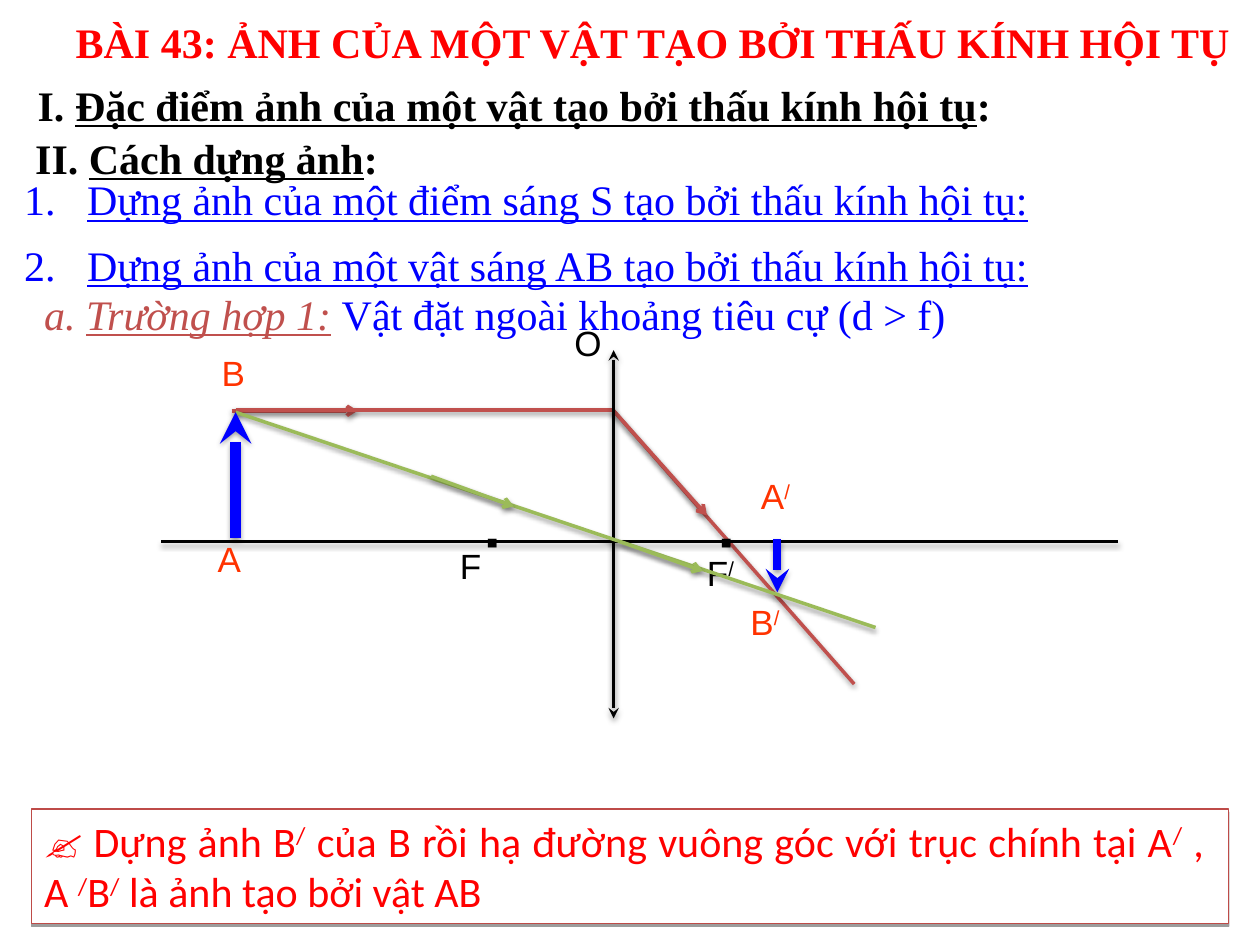
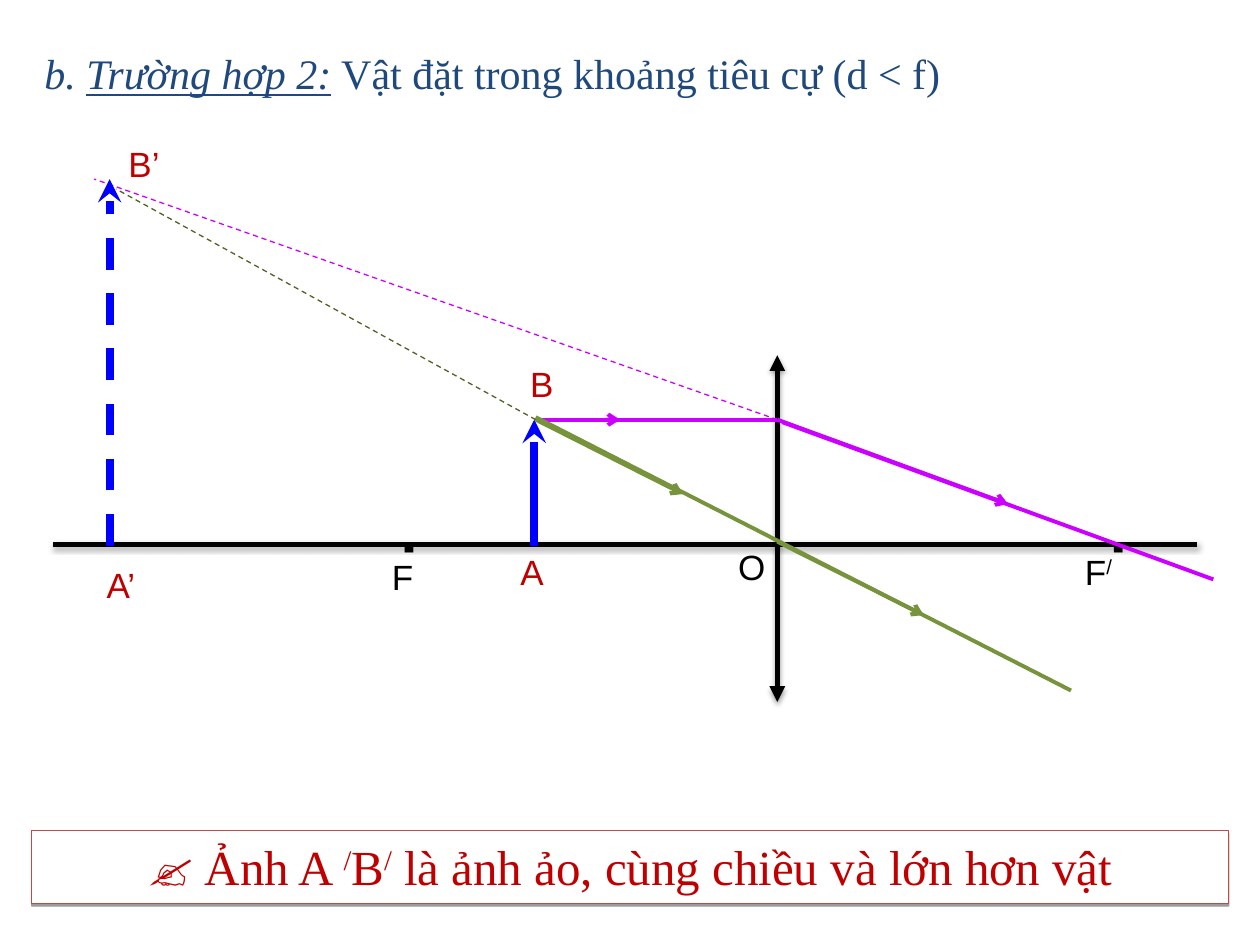
from lxml import etree
from pptx import Presentation
from pptx import util as u
from pptx.dml.color import RGBColor
from pptx.enum import dml, shapes, text
from pptx.oxml.ns import qn

SERIF, SANS, BODY = "Times New Roman", "Arial", "Calibri"
BLACK, WHITE, BLUE, RED = "000000", "FFFFFF", "0000FF", "FF0000"
BRICK, LIME, OLIVE, VIOLET = "C0504D", "9BBB59", "77933C", "CC00FF"
ORANGE, CRIMSON, NAVY, MOSS = "FF3300", "C00000", "1F497D", "4F6228"
EDGE = "BE4B48"


def tint(code):
    """Turn a hex string into a colour."""
    return RGBColor.from_string(code)


def node(parent, tag, **attrs):
    """Append a drawing element to a parent."""
    return etree.SubElement(parent, qn(tag), attrs)


def shade(shape, blur):
    """Give a shape a soft shadow below, or none when blur is None."""
    effects = node(shape.element.spPr, "a:effectLst")
    if blur is not None:
        outer = node(effects, "a:outerShdw", blurRad=str(u.Pt(blur)),
                     dist=str(u.Pt(1.6)), dir="5400000", rotWithShape="0")
        color = node(outer, "a:srgbClr", val=BLACK)
        node(color, "a:alpha", val="38000")


def write(para, *runs, size=24, font=SERIF, color=BLACK, bold=False, italic=False, under=False):
    """Add runs, each a string or (string, changes), raising every prime stroke."""
    base = dict(size=size, font=font, color=color, bold=bold, italic=italic, under=under)
    for item in runs:
        words, change = (item, {}) if isinstance(item, str) else item
        look = {**base, **change}
        for part in filter(None, words.replace("/", "|/|").split("|")):
            run = para.add_run()
            run.text = part
            face = run.font
            face.size, face.name = u.Pt(look["size"]), look["font"]
            face.bold, face.italic = look["bold"], look["italic"]
            face.underline = look["under"]
            face.color.rgb = tint(look["color"])
            if part == "/":
                run._r.get_or_add_rPr().set("baseline", "30000")


def setup(shape, align=text.PP_ALIGN.LEFT):
    """Prepare a text frame and return its first paragraph."""
    frame = shape.text_frame
    frame.word_wrap = True
    frame.auto_size = text.MSO_AUTO_SIZE.NONE
    frame.vertical_anchor = text.MSO_ANCHOR.TOP
    para = frame.paragraphs[0]
    para.alignment = align
    return para


def place(shape, x, y, wide, high):
    """Move and size a placeholder."""
    shape.left, shape.top, shape.width, shape.height = map(u.Cm, (x, y, wide, high))


def title(slide, box, *runs, **look):
    """Fill the title placeholder."""
    place(slide.shapes.title, *box)
    write(setup(slide.shapes.title), *runs, **look)


def line(slide, x, y, wide, *runs, high=1.27, **look):
    """Add a one-line text box."""
    box = slide.shapes.add_textbox(*map(u.Cm, (x, y, wide, high)))
    write(setup(box), *runs, **look)


def label(slide, words, x, y, wide=3.6, color=BLACK, high=1.27):
    """Name a point of the diagram."""
    line(slide, x, y, wide, words, high=high, size=20, font=SANS, color=color)


def steps(slide, box, items):
    """Fill the body placeholder with a numbered list."""
    body = slide.placeholders[1]
    place(body, *box)
    setup(body)
    for index, item in enumerate(items):
        frame = body.text_frame
        para = frame.add_paragraph() if index else frame.paragraphs[0]
        para.alignment = text.PP_ALIGN.LEFT
        para.space_before, para.space_after = u.Pt(0), u.Pt(8.4)
        write(para, item, color=BLUE, under=True)
        props = para._p.get_or_add_pPr()
        props.set("marL", str(u.Cm(1.27)))
        props.set("indent", str(u.Cm(-1.27)))
        node(props, "a:buFont", typeface=SERIF)
        node(props, "a:buAutoNum", type="arabicPeriod")


def ray(slide, start, end, color, width, head=None, tail=None, dash=False, blur=None):
    """Draw a straight line, with optional arrowheads, dashes and shadow."""
    link = slide.shapes.add_connector(
        shapes.MSO_CONNECTOR.STRAIGHT, *map(u.Cm, (*start, *end)))
    link.line.color.rgb = tint(color)
    link.line.width = u.Pt(width)
    if dash:
        link.line.dash_style = dml.MSO_LINE.DASH
    pen = link.element.spPr.find(qn("a:ln"))
    for tag, kind in (("a:headEnd", head), ("a:tailEnd", tail)):
        if kind:
            node(pen, tag, type=kind)
    shade(link, blur)


def lens(slide, left, right, level, mid, top, foot, width, tip):
    """Draw the main axis and the lens across it."""
    ray(slide, (left, level), (right, level), BLACK, width, blur=3.1)
    ray(slide, (mid, top), (mid, foot), BLACK, width, head=tip, tail=tip, blur=3.1)


def note(slide, y, high, align, *runs, **look):
    """Add the framed conclusion at the foot."""
    box = slide.shapes.add_shape(
        shapes.MSO_SHAPE.RECTANGLE, *map(u.Cm, (0.64, y, 24.13, high)))
    box.fill.solid()
    box.fill.fore_color.rgb = tint(WHITE)
    box.line.color.rgb = tint(EDGE)
    box.line.width = u.Pt(0.75)
    shade(box, 0)
    write(setup(box, align), ("✍ ", {"bold": True}), *runs, **look)
    return box


def outside(deck):
    """Build the case of an object beyond the focus."""
    slide = deck.slides.add_slide(deck.slide_layouts[1])
    title(slide, (1.27, 0.2, 24, 1.27),
          "BÀI 43: ẢNH CỦA MỘT VẬT TẠO BỞI THẤU KÍNH HỘI TỤ", color=RED, bold=True)
    for x, y, wide, mark, words in (
            (0.51, 1.47, 19.74, "I. ", "Đặc điểm ảnh của một vật tạo bởi thấu kính hội tụ"),
            (0.46, 2.54, 7.42, "II. ", "Cách dựng ảnh")):
        line(slide, x, y, wide, mark, (words, {"under": True}), ":", bold=True)
    steps(slide, (0.23, 3.38, 20.9, 2.57), [
        f"Dựng ảnh của một {thing} tạo bởi thấu kính hội tụ:"
        for thing in ("điểm sáng S", "vật sáng AB")])
    line(slide, 0.64, 5.69, 24.13, "a. ", ("Trường hợp 1:", {"under": True}), " ",
         ("Vật đặt ngoài khoảng tiêu cự (d > f)", {"color": BLUE, "italic": False}),
         color=BRICK, italic=True)

    for start, end, tail in (
            ((12.37, 8.28), (17.22, 13.79), None),
            ((12.37, 8.28), (14.25, 10.39), "arrow"),
            ((4.67, 8.28), (7.21, 8.28), "arrow"),
            ((4.75, 8.26), (12.37, 8.26), None)):
        ray(slide, start, end, BRICK, 2, tail=tail, blur=3.1)
    for x in (9.55, 14.27):
        label(slide, "▪", x, 10.34, 3.38, high=1.09)
    lens(slide, 3.25, 22.53, 10.92, 12.37, 7.06, 14.48, 2, "stealth")
    for words, x, y in (("F", 9.02, 10.85), ("F/", 14, 11), ("O", 11.33, 6.35)):
        label(slide, words, x, y, 3.38)
    for words, x, y, wide in (("A", 4.14, 10.72, 3.6), ("B", 4.22, 6.96, 3.6),
                              ("B/", 14.88, 11.99, 2.97), ("A/", 15.09, 9.45, 2.74)):
        label(slide, words, x, y, wide, ORANGE)
    ray(slide, (15.67, 10.87), (15.67, 11.94), BLUE, 4.5, tail="stealth", blur=3.1)
    for start, end, tail in (
            ((4.75, 8.31), (17.65, 12.65), None),
            ((8.69, 9.6), (10.36, 10.21), "arrow"),
            ((12.5, 10.92), (14.17, 11.51), "arrow")):
        ray(slide, start, end, LIME, 2, tail=tail, blur=3.1)
    ray(slide, (4.75, 10.85), (4.75, 8.31), BLUE, 6, tail="stealth", blur=3.1)

    box = note(slide, 16.31, 2.31, text.PP_ALIGN.JUSTIFY,
               "Dựng ảnh B/ của B rồi hạ đường vuông góc với trục chính tại A/ , "
               "A /B/ là ảnh tạo bởi vật AB", font=BODY, color=RED)
    box.text_frame.margin_right = u.Cm(0.5)


def inside(deck):
    """Build the case of an object within the focus."""
    slide = deck.slides.add_slide(deck.slide_layouts[5])
    title(slide, (0.64, 0.84, 24.13, 1.27), ("b. ", {"italic": True}),
          ("Trường hợp 2:", {"italic": True, "under": True}),
          " Vật đặt trong khoảng tiêu cự (d < f)", color=NAVY)
    note(slide, 16.74, 1.47, text.PP_ALIGN.CENTER,
         "Ảnh A /B/ là ảnh ảo, cùng chiều và lớn hơn vật", size=28, color=CRIMSON)

    lens(slide, 1.07, 24.13, 10.97, 15.67, 7.16, 14.15, 3, "triangle")
    for words, x, y, wide in (("▪", 7.87, 10.44, 3.6), ("▪", 22.17, 10.44, 2.39),
                              ("F", 7.65, 11.07, 4.01), ("F/", 21.62, 10.97, 1.47),
                              ("O", 14.63, 10.87, 3.81)):
        label(slide, words, x, y, wide)
    for words, x, y in (("A", 10.24, 10.97), ("B", 10.44, 7.19),
                        ("B’", 2.34, 2.74), ("A’", 1.9, 11.23)):
        label(slide, words, x, y, color=CRIMSON, high=1.02)

    tip, hit = (10.8, 8.46), (15.67, 8.46)
    ray(slide, (10.77, 11), (10.77, 8.46), BLUE, 4.5, tail="stealth")
    for start, end, color, tail in (
            (tip, hit, VIOLET, None),
            ((12.07, 8.46), (12.5, 8.46), VIOLET, "arrow"),
            ((15.77, 8.51), (24.46, 11.68), VIOLET, None),
            (hit, (20.32, 10.16), VIOLET, "arrow"),
            ((10.8, 8.41), (21.59, 13.92), OLIVE, None),
            (tip, (13.77, 9.96), OLIVE, "arrow"),
            ((15.67, 10.92), (18.62, 12.4), OLIVE, "arrow")):
        ray(slide, start, end, color, 2.25, tail=tail)
    ray(slide, hit, (1.9, 3.61), VIOLET, 0.75, dash=True)
    ray(slide, tip, (2.34, 3.81), MOSS, 0.75, dash=True)
    ray(slide, (2.21, 11), (2.21, 3.61), BLUE, 4.5, tail="stealth", dash=True)


def main():
    """Build both slides and save the deck."""
    deck = Presentation()
    deck.slide_width, deck.slide_height = u.Cm(25.4), u.Cm(19.05)
    outside(deck)
    inside(deck)
    deck.save("out.pptx")


if __name__ == "__main__":
    main()
